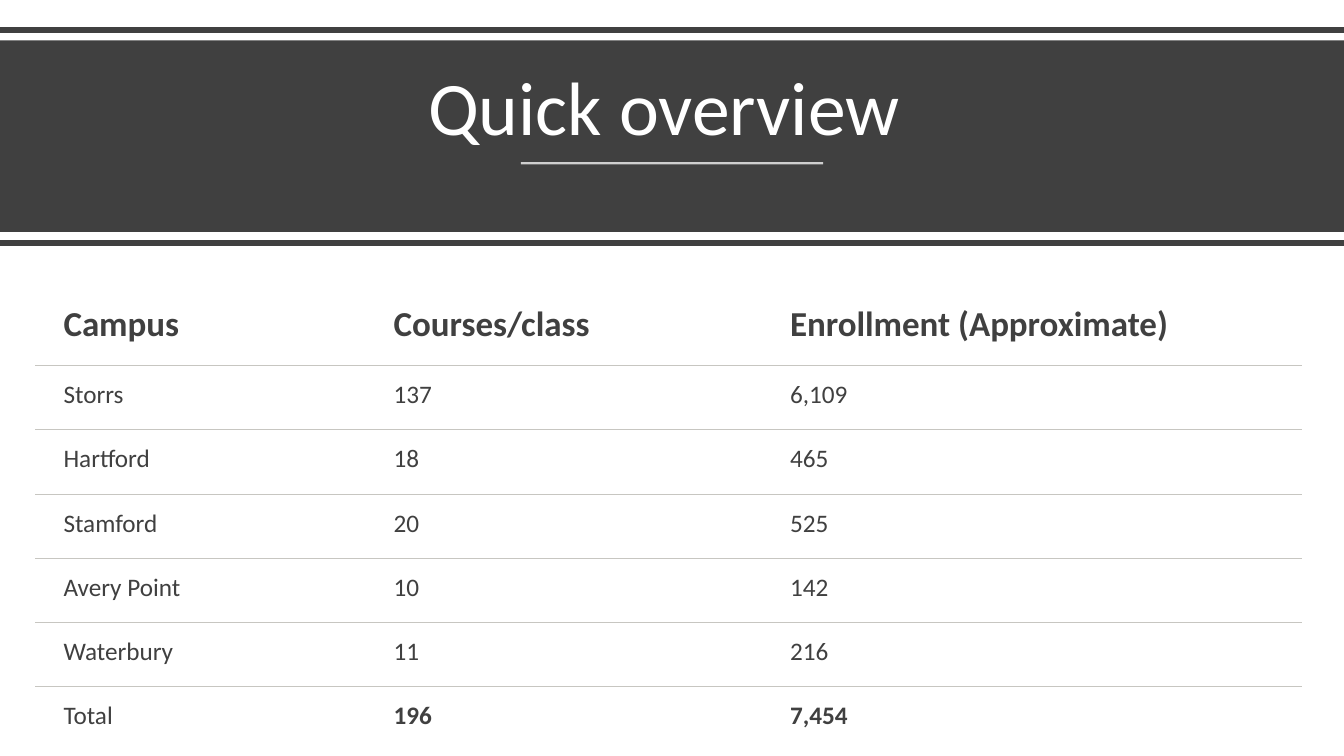
"""Build the campus overview slide with a title band and an enrollment table."""
from dataclasses import dataclass

from lxml.etree import SubElement
from pptx import Presentation
from pptx.dml.color import RGBColor
from pptx.enum.shapes import MSO_CONNECTOR, MSO_SHAPE
from pptx.enum.text import MSO_ANCHOR, PP_ALIGN
from pptx.oxml import parse_xml
from pptx.oxml.ns import nsdecls, qn
from pptx.util import Pt

TITLE = "Quick overview "
HEADER = ("Campus", "Courses/class", "Enrollment (Approximate)")
CAMPUSES = [
    ("Storrs", "137", "6,109"),
    ("Hartford", "18", "465"),
    ("Stamford", "20", "525"),
    ("Avery Point", "10", "142"),
    ("Waterbury", "11", "216"),
]
TOTAL = ("Total", "196", "7,454")

WIDTH, HEIGHT = 960, 540
BAND_TOP, BAND_HEIGHT = 28.8, 136.8
RULE_HEIGHTS = (21.6, 173.5)
TITLE_BOX = (41.8, 38.9, 877, 73.4)
UNDERLINE_Y, UNDERLINE_WIDTH = 116.6, 216
TABLE_LEFT, TABLE_TOP = 25.2, 206.6
COLUMN_WIDTHS = (235.8, 283.2, 386.2)
HEADER_HEIGHT, ROW_HEIGHT = 54.5, 45.9
NO_GRID_STYLE = "{2D5ABB26-0587-4C30-8999-92F81FD0307C}"


@dataclass(frozen=True)
class Theme:
    """Colours, font and sizes used on the slide."""
    font: str = "Calibri"
    dark: str = "404040"
    light: str = "FFFFFF"
    border: str = "C7C6C1"
    title_size: int = 54
    header_size: int = 25
    body_size: int = 18


THEME = Theme()


def format_text(paragraph, size, color, bold=False):
    """Style every run of a paragraph."""
    for run in paragraph.runs:
        run.font.name = THEME.font
        run.font.size = Pt(size)
        run.font.bold = bold
        run.font.color.rgb = RGBColor.from_string(color)


def add_rule(slide, left, right, y, color, weight):
    """Draw a horizontal line without shadow."""
    rule = slide.shapes.add_connector(
        MSO_CONNECTOR.STRAIGHT, Pt(left), Pt(y), Pt(right), Pt(y))
    rule.line.color.rgb = RGBColor.from_string(color)
    rule.line.width = Pt(weight)
    SubElement(rule.element.spPr, qn("a:effectLst"))
    return rule


def add_title_band(slide):
    """Add the dark band, its rules and the underlined title."""
    band = slide.shapes.add_shape(
        MSO_SHAPE.RECTANGLE, 0, Pt(BAND_TOP), Pt(WIDTH), Pt(BAND_HEIGHT))
    band.shadow.inherit = False
    band.fill.solid()
    band.fill.fore_color.rgb = RGBColor.from_string(THEME.dark)
    band.line.fill.background()
    for y in RULE_HEIGHTS:
        add_rule(slide, 0, WIDTH, y, THEME.dark, 4)

    frame = slide.shapes.add_textbox(*map(Pt, TITLE_BOX)).text_frame
    frame.word_wrap = True
    frame.vertical_anchor = MSO_ANCHOR.BOTTOM
    frame.text = TITLE
    paragraph = frame.paragraphs[0]
    paragraph.alignment = PP_ALIGN.CENTER
    paragraph.line_spacing = 0.9
    format_text(paragraph, THEME.title_size, THEME.light)

    left = (WIDTH - UNDERLINE_WIDTH) / 2
    underline = add_rule(
        slide, left, left + UNDERLINE_WIDTH, UNDERLINE_Y, THEME.light, 1.5)
    color = underline.line._ln.find(".//" + qn("a:srgbClr"))
    SubElement(color, qn("a:alpha"), val="75000")


def add_border(cell, side):
    """Give one side of a cell a thin line."""
    border = parse_xml(
        f'<a:{side} {nsdecls("a")} w="{Pt(0.75)}"><a:solidFill>'
        f'<a:srgbClr val="{THEME.border}"/></a:solidFill></a:{side}>')
    properties = cell._tc.get_or_add_tcPr()
    properties.insert(0, border)


def add_campus_table(slide):
    """Add the table with lines between its rows."""
    rows = [HEADER, *CAMPUSES, TOTAL]
    last = len(rows) - 1
    heights = [HEADER_HEIGHT] + [ROW_HEIGHT] * last
    frame = slide.shapes.add_table(
        len(rows), len(HEADER), Pt(TABLE_LEFT), Pt(TABLE_TOP),
        Pt(sum(COLUMN_WIDTHS)), Pt(sum(heights)))
    table = frame.table
    table.horz_banding = False
    table._tbl.tblPr.find(qn("a:tableStyleId")).text = NO_GRID_STYLE
    for column, width in zip(table.columns, COLUMN_WIDTHS):
        column.width = Pt(width)
    for row_index, values in enumerate(rows):
        table.rows[row_index].height = Pt(heights[row_index])
        for column_index, value in enumerate(values):
            cell = table.cell(row_index, column_index)
            cell.text_frame.text = value
            cell.margin_left, cell.margin_right = Pt(20.2), Pt(15.1)
            cell.margin_top = cell.margin_bottom = Pt(10.1)
            cell.fill.background()
            is_header = row_index == 0
            is_sum = row_index == last and column_index > 0
            size = THEME.header_size if is_header else THEME.body_size
            format_text(cell.text_frame.paragraphs[0], size, THEME.dark,
                        is_header or is_sum)
            if row_index < last:
                add_border(cell, "lnB")
            if row_index > 0:
                add_border(cell, "lnT")


def main():
    """Create and save the presentation."""
    presentation = Presentation()
    presentation.slide_width, presentation.slide_height = Pt(WIDTH), Pt(HEIGHT)
    slide = presentation.slides.add_slide(presentation.slide_layouts[6])
    add_title_band(slide)
    add_campus_table(slide)
    presentation.save("out.pptx")


if __name__ == "__main__":
    main()
